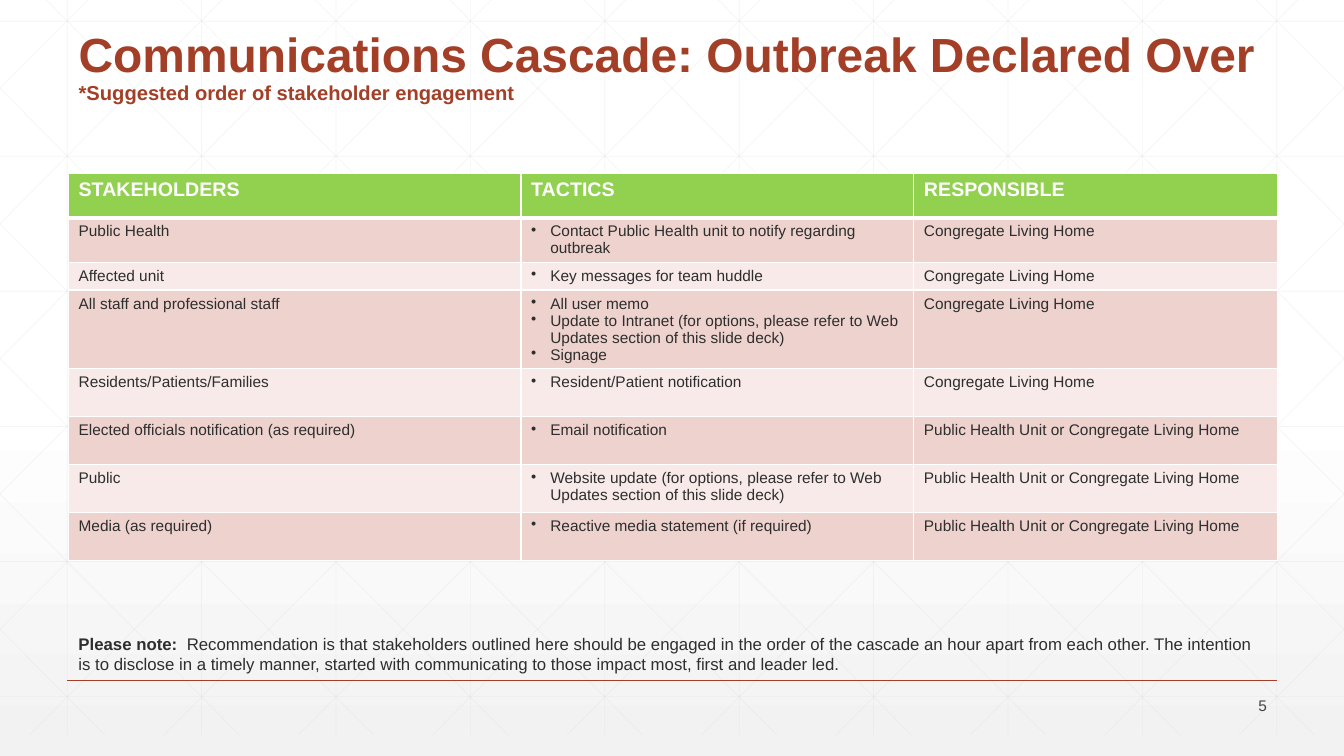
import copy
import dataclasses
import typing

import lxml.etree
import pptx
import pptx.dml.color
import pptx.enum.dml
import pptx.enum.shapes
import pptx.enum.text
import pptx.oxml.ns
import pptx.util

Color = pptx.dml.color.RGBColor
RUST = Color(0xA4, 0x3F, 0x27)
GREEN = Color(0x92, 0xD0, 0x50)
ROSE = Color(0xEE, 0xD2, 0xCE)
BLUSH = Color(0xF7, 0xEA, 0xE8)
INK = Color(0x2D, 0x2E, 0x2D)
GRAY = Color(0x42, 0x43, 0x42)
MESH = Color(0xD9, 0xD9, 0xD9)
PALE = Color(0xF2, 0xF2, 0xF2)
WHITE = Color(0xFF, 0xFF, 0xFF)

WIDE = pptx.util.Inches(13.33)
HIGH = pptx.util.Inches(7.5)
ALIGN = pptx.enum.text.PP_ALIGN
ANCHOR = pptx.enum.text.MSO_ANCHOR
qn = pptx.oxml.ns.qn


@dataclasses.dataclass(frozen=True)
class Box:
    """Place and size in percent of the slide."""
    left: float
    top: float
    width: float
    height: float

    def frame(self) -> tuple[int, int, int, int]:
        return across(self.left), down(self.top), across(self.width), down(self.height)


@dataclasses.dataclass(frozen=True)
class Step:
    """One row of the cascade; height in percent of the slide."""
    who: str
    tactics: tuple[str, ...]
    lead: str
    height: float


HOME = "Congregate Living Home"
UNIT = "Public Health Unit or Congregate Living Home"
TALL = 6.35
STEPS = (
    Step("Public Health", ("Contact Public Health unit to notify regarding outbreak",), HOME, 5.8),
    Step("Affected unit", ("Key messages for team huddle",), HOME, 3.7),
    Step("All staff and professional staff",
         ("All user memo",
          "Update to Intranet (for options, please refer to Web Updates section of this slide deck)",
          "Signage"), HOME, 10.3),
    Step("Residents/Patients/Families", ("Resident/Patient notification",), HOME, TALL),
    Step("Elected officials notification (as required)", ("Email notification",), UNIT, TALL),
    Step("Public",
         ("Website update (for options, please refer to Web Updates section of this slide deck)",),
         UNIT, TALL),
    Step("Media (as required)", ("Reactive media statement (if required)",), UNIT, TALL),
)
HEADS = ("STAKEHOLDERS", "TACTICS", "RESPONSIBLE")
SHARES = (33.67, 29.23, 27.05)
HEAD_HIGH = 5.87


def across(share: float) -> int:
    return round(WIDE * share / 100)


def down(share: float) -> int:
    return round(HIGH * share / 100)


def write(para: typing.Any, text: str, *, size: float, color: Color = INK,
          bold: bool = False) -> typing.Any:
    run = para.add_run()
    run.text = text
    run.font.name = "Arial"
    run.font.size = pptx.util.Pt(size)
    run.font.bold = bold
    run.font.color.rgb = color
    return run


def rule(shapes: typing.Any, start: tuple[float, float], end: tuple[float, float], *,
         color: Color, weight: float, alpha: int = 100) -> None:
    """Draw a line between two points given in percent of the slide."""
    line = shapes.add_connector(
        pptx.enum.shapes.MSO_CONNECTOR.STRAIGHT,
        across(start[0]), down(start[1]), across(end[0]), down(end[1]))
    line.line.color.rgb = color
    line.line.width = pptx.util.Pt(weight)
    props = line._element.spPr
    lxml.etree.SubElement(props, qn("a:effectLst"))
    if alpha < 100:
        tint = props.find(".//" + qn("a:srgbClr"))
        lxml.etree.SubElement(tint, qn("a:alpha"), val=str(alpha * 1000))


def draw_mesh(slide: typing.Any) -> None:
    top, base, run = -2.8, 97.2, 55.9
    group = slide.shapes.add_group_shape()

    def thin(start: tuple[float, float], end: tuple[float, float]) -> None:
        rule(group.shapes, start, end, color=MESH, weight=0.5, alpha=25)

    for col in range(10):
        thin((5 + 10 * col, top), (5 + 10 * col, base))
    for row in range(6):
        y = 2.8 + 17.87 * row
        thin((0, y), (100, y))
    # Slanted lines, clipped to the slide, and their mirror twins
    for col in range(-5, 10):
        x = 1.9 + 10 * col
        left, right = max(x, 0), min(x + run, 100)
        y1, y2 = (top + 100 * (edge - x) / run for edge in (left, right))
        thin((left, y1), (right, y2))
        thin((100 - left, y1), (100 - right, y2))
    slide.shapes._spTree.insert(2, group._element)


def bullet(para: typing.Any) -> None:
    props = para._p.get_or_add_pPr()
    dent = pptx.util.Inches(0.19)
    props.set("marL", str(dent))
    props.set("indent", str(-dent))
    lxml.etree.SubElement(props, qn("a:buChar"), char="•")


def paint(cell: typing.Any, color: Color, *, top: int = 1, base: int = 1) -> None:
    cell.fill.solid()
    cell.fill.fore_color.rgb = color
    props = cell._tc.get_or_add_tcPr()
    sides = (("a:lnL", 1), ("a:lnR", 1), ("a:lnT", top), ("a:lnB", base))
    for place, (tag, weight) in enumerate(sides):
        edge = lxml.etree.Element(qn(tag), w=str(pptx.util.Pt(weight)))
        fill = lxml.etree.SubElement(edge, qn("a:solidFill"))
        lxml.etree.SubElement(fill, qn("a:srgbClr"), val=str(WHITE))
        props.insert(place, edge)


def draw_table(slide: typing.Any, box: Box) -> None:
    table = slide.shapes.add_table(len(STEPS) + 1, len(HEADS), *box.frame()).table
    table.horz_banding = False
    for col, share in zip(table.columns, SHARES):
        col.width = across(share)
    table.rows[0].height = down(HEAD_HIGH)
    for cell, head in zip(table.rows[0].cells, HEADS):
        paint(cell, GREEN, base=3)
        write(cell.text_frame.paragraphs[0], head, size=14, color=WHITE, bold=True)
    for num, step in enumerate(STEPS, 1):
        row = table.rows[num]
        row.height = down(step.height)
        for cell, lines in zip(row.cells, ((step.who,), step.tactics, (step.lead,))):
            paint(cell, ROSE if num % 2 else BLUSH, top=3 if num == 1 else 1)
            frame = cell.text_frame
            for place, text in enumerate(lines):
                para = frame.add_paragraph() if place else frame.paragraphs[0]
                if lines is step.tactics:
                    bullet(para)
                write(para, text, size=11)


def set_title(slide: typing.Any, box: Box) -> None:
    title = slide.shapes.title
    title.left, title.top, title.width, title.height = box.frame()
    frame = title.text_frame
    frame.auto_size = pptx.enum.text.MSO_AUTO_SIZE.NONE
    frame.vertical_anchor = ANCHOR.BOTTOM
    para = frame.paragraphs[0]
    para.alignment = ALIGN.LEFT
    para.line_spacing = 0.9
    main = write(para, "Communications Cascade: Outbreak Declared Over",
                 size=34.2, color=RUST, bold=True)
    # The line break takes the size of the text before it
    para.add_line_break()
    para._p.find(qn("a:br")).append(copy.deepcopy(main._r.rPr))
    write(para, "*Suggested order of stakeholder engagement", size=14.4, color=RUST, bold=True)


def add_box(slide: typing.Any, box: Box, anchor: ANCHOR = ANCHOR.TOP) -> typing.Any:
    frame = slide.shapes.add_textbox(*box.frame()).text_frame
    frame.word_wrap = True
    frame.vertical_anchor = anchor
    return frame.paragraphs[0]


def main() -> None:
    deck = pptx.Presentation()
    deck.slide_width, deck.slide_height = WIDE, HIGH
    slide = deck.slides.add_slide(deck.slide_layouts[5])

    # Backdrop
    fill = slide.background.fill
    fill.gradient()
    fill.gradient_angle = 270
    for stop, color, place in zip(fill.gradient_stops, (WHITE, PALE), (0.53, 1)):
        stop.color.rgb = color
        stop.position = place
    draw_mesh(slide)
    rule(slide.shapes, (5, 90), (95, 90), color=RUST, weight=1)

    # Title and table
    set_title(slide, Box(5.1, 1.33, 89.95, 13.2))
    draw_table(slide, Box(5.1, 22.93, 89.95, 51.07))

    # Page number and note
    page = add_box(slide, Box(87.5, 91.73, 7.5, 3.2), ANCHOR.MIDDLE)
    page.alignment = ALIGN.RIGHT
    write(page, "5", size=11, color=GRAY)
    note = add_box(slide, Box(5.1, 83.2, 89.95, 6.67))
    write(note, "Please note:  ", size=12, bold=True)
    write(note, "Recommendation is that stakeholders outlined here should be engaged in the order "
          "of the cascade an hour apart from each other. The intention is to disclose in a timely "
          "manner, started with communicating to those impact most, first and leader led.", size=12)
    deck.save("out.pptx")


if __name__ == "__main__":
    main()
